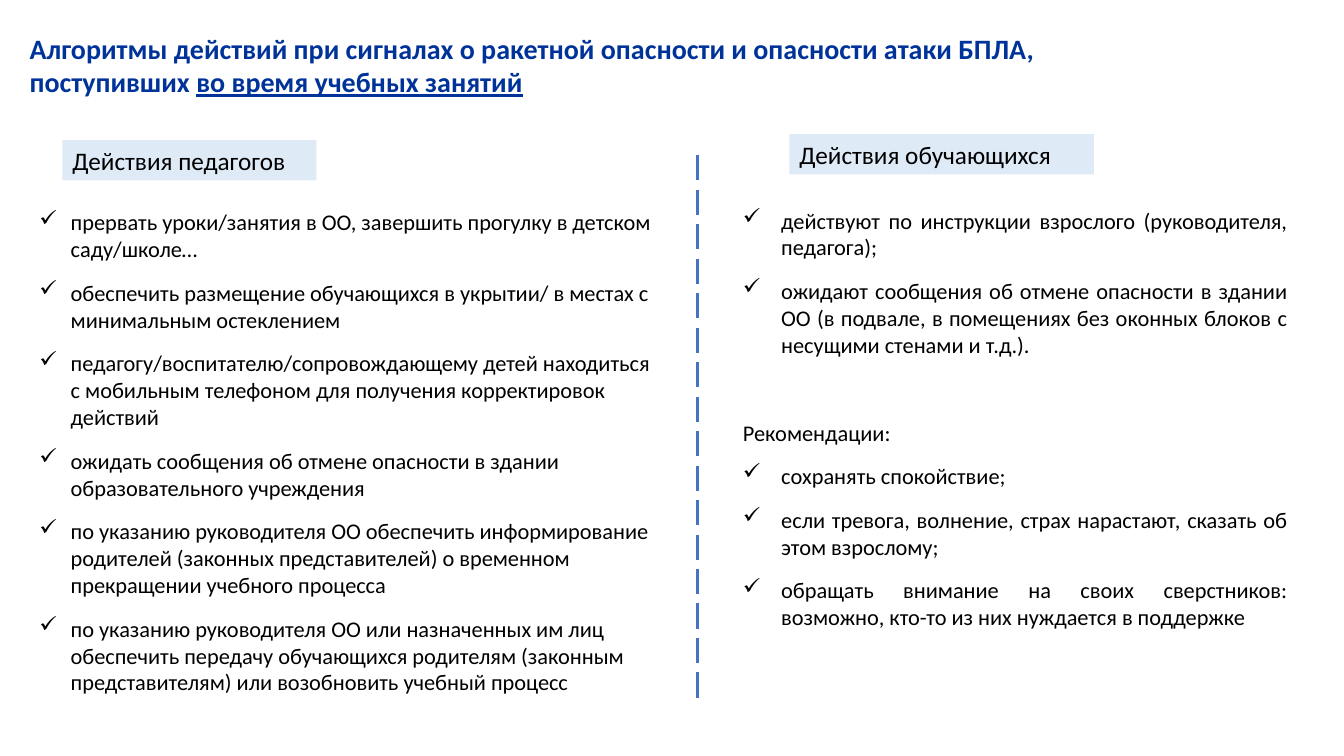
from lxml import etree
from pptx import Presentation
from pptx.dml.color import RGBColor
from pptx.enum.dml import MSO_LINE
from pptx.enum.shapes import MSO_CONNECTOR, MSO_SHAPE
from pptx.enum.text import MSO_ANCHOR, MSO_AUTO_SIZE, PP_ALIGN
from pptx.oxml.ns import qn
from pptx.util import Inches, Pt

LEFT, JUSTIFY = PP_ALIGN.LEFT, PP_ALIGN.JUSTIFY
TOP, MIDDLE = MSO_ANCHOR.TOP, MSO_ANCHOR.MIDDLE
GROW, FIXED = MSO_AUTO_SIZE.SHAPE_TO_FIT_TEXT, MSO_AUTO_SIZE.NONE
LONG_DASH = MSO_LINE.LONG_DASH
RECTANGLE, STRAIGHT = MSO_SHAPE.RECTANGLE, MSO_CONNECTOR.STRAIGHT
TITLE_ONLY = 5

TEACHER_ACTIONS = [
    "прервать уроки/занятия в ОО, завершить прогулку в детском саду/школе…",
    "обеспечить размещение обучающихся в укрытии/ в местах с минимальным остеклением",
    "педагогу/воспитателю/сопровождающему детей находиться с мобильным телефоном "
    "для получения корректировок действий",
    "ожидать сообщения об отмене опасности в здании образовательного учреждения",
    "по указанию руководителя ОО обеспечить информирование родителей (законных "
    "представителей) о временном прекращении учебного процесса",
    "по указанию руководителя ОО или назначенных им лиц обеспечить передачу обучающихся "
    "родителям (законным представителям) или возобновить учебный процесс",
]
STUDENT_ACTIONS = [
    "действуют по инструкции взрослого (руководителя, педагога);",
    "ожидают сообщения об отмене опасности в здании ОО (в подвале, в помещениях "
    "без оконных блоков с несущими стенами и т.д.).",
]
RECOMMENDATIONS = [
    "сохранять спокойствие;",
    "если тревога, волнение, страх нарастают, сказать об этом взрослому;",
    "обращать внимание на своих сверстников: возможно, кто-то из них нуждается в поддержке",
]


def color(hex_value):
    return RGBColor.from_string(hex_value)


class AlgorithmSlide:
    """Style and slide; every position and size is a percentage of the slide."""

    FONT = "Calibri"
    INK, TITLE_INK, LABEL_FILL, DIVIDER = "000000", "003399", "DEEBF7", "4472C4"
    TITLE_SIZE, LABEL_SIZE, BODY_SIZE = 20, 18, 16
    PARAGRAPH_GAP = 12

    def __init__(self, deck):
        self.deck = deck
        self.slide = deck.slides.add_slide(deck.slide_layouts[TITLE_ONLY])

    def x(self, percent):
        return round(self.deck.slide_width * percent / 100)

    def y(self, percent):
        return round(self.deck.slide_height * percent / 100)

    def frame(self, left, top, width, height):
        return self.x(left), self.y(top), self.x(width), self.y(height)

    def run(self, paragraph, text, size, ink=INK, bold=False, underline=False):
        run = paragraph.add_run()
        run.text = text
        font = run.font
        font.name, font.size = self.FONT, Pt(size)
        font.bold, font.underline = bold, underline
        font.color.rgb = color(ink)

    def title(self, frame, plain, underlined):
        title = self.slide.shapes.title
        title.left, title.top, title.width, title.height = self.frame(*frame)
        area = title.text_frame
        area.margin_left = area.margin_right = area.margin_top = area.margin_bottom = 0
        area.word_wrap, area.auto_size, area.vertical_anchor = True, FIXED, TOP
        heading = area.paragraphs[0]
        heading.alignment = LEFT
        self.run(heading, plain, self.TITLE_SIZE, self.TITLE_INK, bold=True)
        self.run(heading, underlined, self.TITLE_SIZE, self.TITLE_INK, bold=True, underline=True)

    def label(self, frame, text):
        label = self.slide.shapes.add_shape(RECTANGLE, *self.frame(*frame))
        label.shadow.inherit = False
        label.fill.solid()
        label.fill.fore_color.rgb = color(self.LABEL_FILL)
        label.line.fill.background()
        area = label.text_frame
        area.word_wrap, area.auto_size, area.vertical_anchor = True, GROW, MIDDLE
        area.paragraphs[0].alignment = LEFT
        self.run(area.paragraphs[0], text, self.LABEL_SIZE)

    def text_area(self, frame, top_margin=0.05):
        area = self.slide.shapes.add_textbox(*self.frame(*frame)).text_frame
        area.word_wrap, area.auto_size, area.vertical_anchor = True, GROW, TOP
        area.margin_top = Inches(top_margin)
        return area

    def paragraph(self, area, text, alignment, space_before=0):
        first = area.paragraphs[0]
        paragraph = area.add_paragraph() if first.runs else first
        paragraph.alignment = alignment
        paragraph.space_after = Pt(self.PARAGRAPH_GAP)
        if space_before:
            paragraph.space_before = Pt(space_before)
        self.run(paragraph, text, self.BODY_SIZE)
        return paragraph

    def checklist(self, area, items, alignment, indent):
        for item in items:
            properties = self.paragraph(area, item, alignment)._p.get_or_add_pPr()
            properties.set("marL", str(Inches(indent)))
            properties.set("indent", str(-Inches(indent)))
            etree.SubElement(properties, qn("a:buChar")).set("char", "✓")

    def divider(self, x, top, bottom):
        divider = self.slide.shapes.add_connector(
            STRAIGHT, self.x(x), self.y(top), self.x(x), self.y(bottom))
        divider.line.color.rgb = color(self.DIVIDER)
        divider.line.width = Pt(2.25)
        divider.line.dash_style = LONG_DASH
        etree.SubElement(divider._element.spPr, qn("a:effectLst"))


def main():
    deck = Presentation()
    deck.slide_width, deck.slide_height = Inches(13.33), Inches(7.5)
    page = AlgorithmSlide(deck)

    page.title((2.2, 4.13, 76.74, 14.4),
               "Алгоритмы действий при сигналах о ракетной опасности и опасности атаки БПЛА, "
               "поступивших ", "во время учебных занятий")

    teachers = page.text_area((2.2, 26.93, 47.19, 67.3))
    page.checklist(teachers, TEACHER_ACTIONS, LEFT, indent=0.31)

    students = page.text_area((54.54, 23.07, 42.01, 61.47), top_margin=0.32)
    page.checklist(students, STUDENT_ACTIONS, JUSTIFY, indent=0.38)
    page.paragraph(students, "Рекомендации:", JUSTIFY, space_before=31.5)
    page.checklist(students, RECOMMENDATIONS, JUSTIFY, indent=0.38)

    page.label((58.74, 17.73, 22.66, 5.33), "Действия обучающихся")
    page.label((4.65, 18.53, 18.9, 5.33), "Действия педагогов")
    page.divider(51.91, 20.53, 93.07)

    deck.save("out.pptx")


if __name__ == "__main__":
    main()
